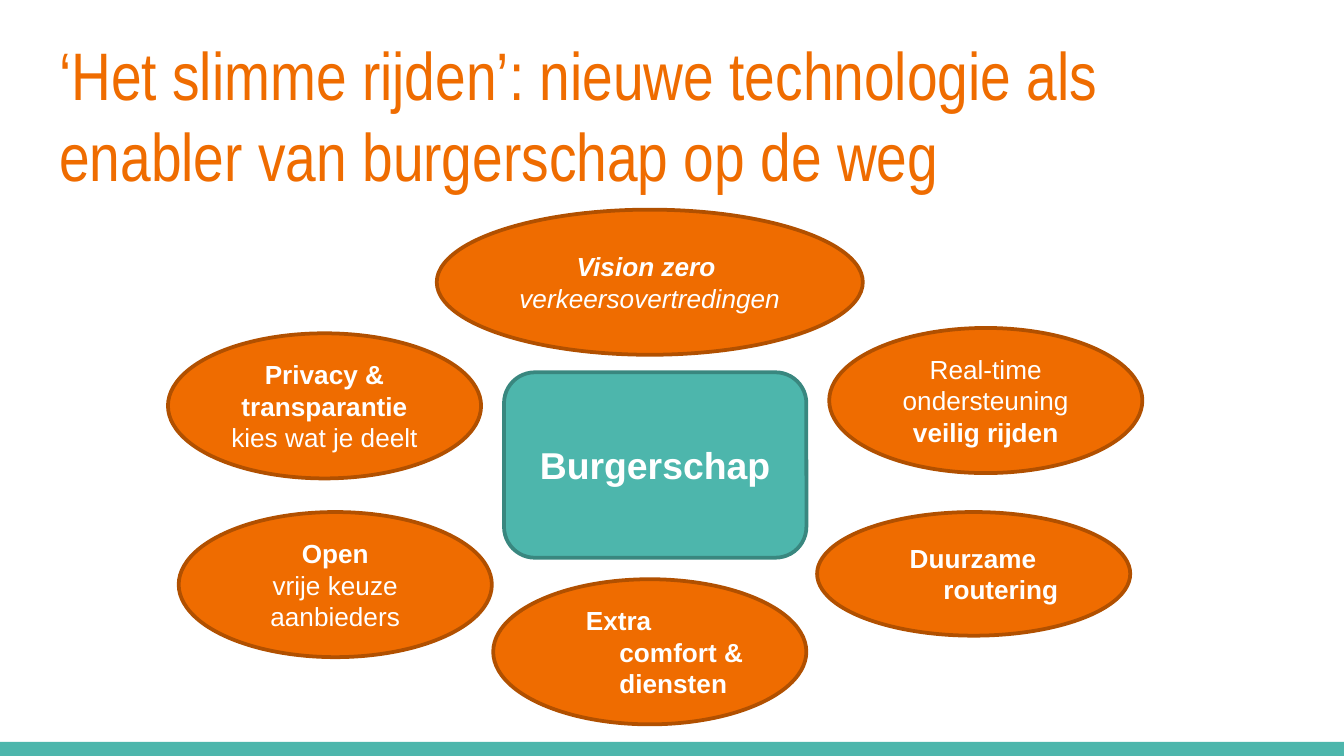
"""Build a slide with themes arranged around the central idea of citizenship."""
from copy import deepcopy

from pptx import Presentation
from pptx.dml.color import RGBColor
from pptx.enum.shapes import MSO_SHAPE
from pptx.enum.text import MSO_ANCHOR, MSO_AUTO_SIZE, PP_ALIGN
from pptx.util import Inches, Pt

ORANGE = RGBColor(0xEF, 0x6C, 0x00)
DARK_ORANGE = RGBColor(0xB1, 0x50, 0x00)
TEAL = RGBColor(0x4D, 0xB6, 0xAC)
DARK_TEAL = RGBColor(0x39, 0x87, 0x7F)
WHITE = RGBColor(0xFF, 0xFF, 0xFF)
RECTANGLE = MSO_SHAPE.RECTANGLE
ROUNDED = MSO_SHAPE.ROUNDED_RECTANGLE
OVAL = MSO_SHAPE.OVAL
TOP, MIDDLE = MSO_ANCHOR.TOP, MSO_ANCHOR.MIDDLE
LEFT, CENTER = PP_ALIGN.LEFT, PP_ALIGN.CENTER
NO_AUTOFIT = MSO_AUTO_SIZE.NONE


def add_text(paragraph, text, size=14, font="Arial", color=WHITE, bold=False, italic=False):
    run = paragraph.add_run()
    run.text = text.rstrip("\n")
    run.font.size = Pt(size)
    run.font.name = font
    run.font.color.rgb = color
    run.font.bold = bold
    run.font.italic = italic
    if text.endswith("\n"):
        paragraph.add_line_break()
        paragraph._p[-1].append(deepcopy(run._r.get_or_add_rPr()))


def add_block(kind, box, fill, outline=None):
    block = slide.shapes.add_shape(kind, *map(Inches, box))
    block.shadow.inherit = False
    block.fill.solid()
    block.fill.fore_color.rgb = fill
    if outline is None:
        block.line.fill.background()
    else:
        block.line.color.rgb = outline
        block.line.width = Pt(2)
    block.text_frame.word_wrap = True
    block.text_frame.vertical_anchor = MIDDLE
    return block.text_frame.paragraphs[0]


deck = Presentation()
deck.slide_width, deck.slide_height = Inches(10), Inches(10 * 9 / 16)
slide = deck.slides.add_slide(deck.slide_layouts[5])

add_block(RECTANGLE, (0, 5.52, 10, 0.11), TEAL)

title = slide.shapes.title
title.left, title.top = Inches(0.34), Inches(0.15)
title.width, title.height = Inches(9.32), Inches(0.77)
heading = title.text_frame
heading.auto_size = NO_AUTOFIT
heading.word_wrap = True
heading.vertical_anchor = TOP
heading.margin_left = heading.margin_right = Inches(0.1)
heading.margin_top = heading.margin_bottom = Inches(0.1)
heading.paragraphs[0].alignment = LEFT
add_text(
    heading.paragraphs[0],
    "‘Het slimme rijden’: nieuwe technologie als enabler van burgerschap op de weg",
    size=36, font="Arial Narrow", color=ORANGE,
)

BOLD = {"bold": True}
ITALIC = {"italic": True}
themes = [
    ((3.67, 4.31, 2.33, 1.08), True, [("Extra comfort & diensten", BOLD)]),
    ((6.17, 2.44, 2.33, 1.08), False,
     [("Real-time ondersteuning ", {}), ("veilig rijden", BOLD)]),
    ((1.33, 3.81, 2.33, 1.08), False,
     [("Open\n", BOLD), ("vrije keuze aanbieders", {})]),
    ((3.25, 1.56, 3.17, 1.08), False,
     [("Vision zero \n", BOLD | ITALIC), ("verkeersovertredingen", ITALIC)]),
    ((1.25, 2.48, 2.33, 1.08), False,
     [("Privacy & transparantie ", BOLD), ("kies wat je deelt", {})]),
    ((6.08, 3.81, 2.33, 0.92), True, [("Duurzame routering", BOLD)]),
]
for box, hanging, wording in themes:
    theme = add_block(OVAL, box, ORANGE, DARK_ORANGE)
    theme.alignment = LEFT if hanging else CENTER
    if hanging:
        indents = theme._p.get_or_add_pPr()
        indents.set("marL", str(Inches(0.5)))
        indents.set("indent", str(Inches(-0.25)))
    for text, style in wording:
        add_text(theme, text, **style)

citizenship = add_block(ROUNDED, (3.75, 2.77, 2.25, 1.38), TEAL, DARK_TEAL)
citizenship.alignment = CENTER
add_text(citizenship, "Burgerschap", size=20, bold=True)

deck.save("out.pptx")
